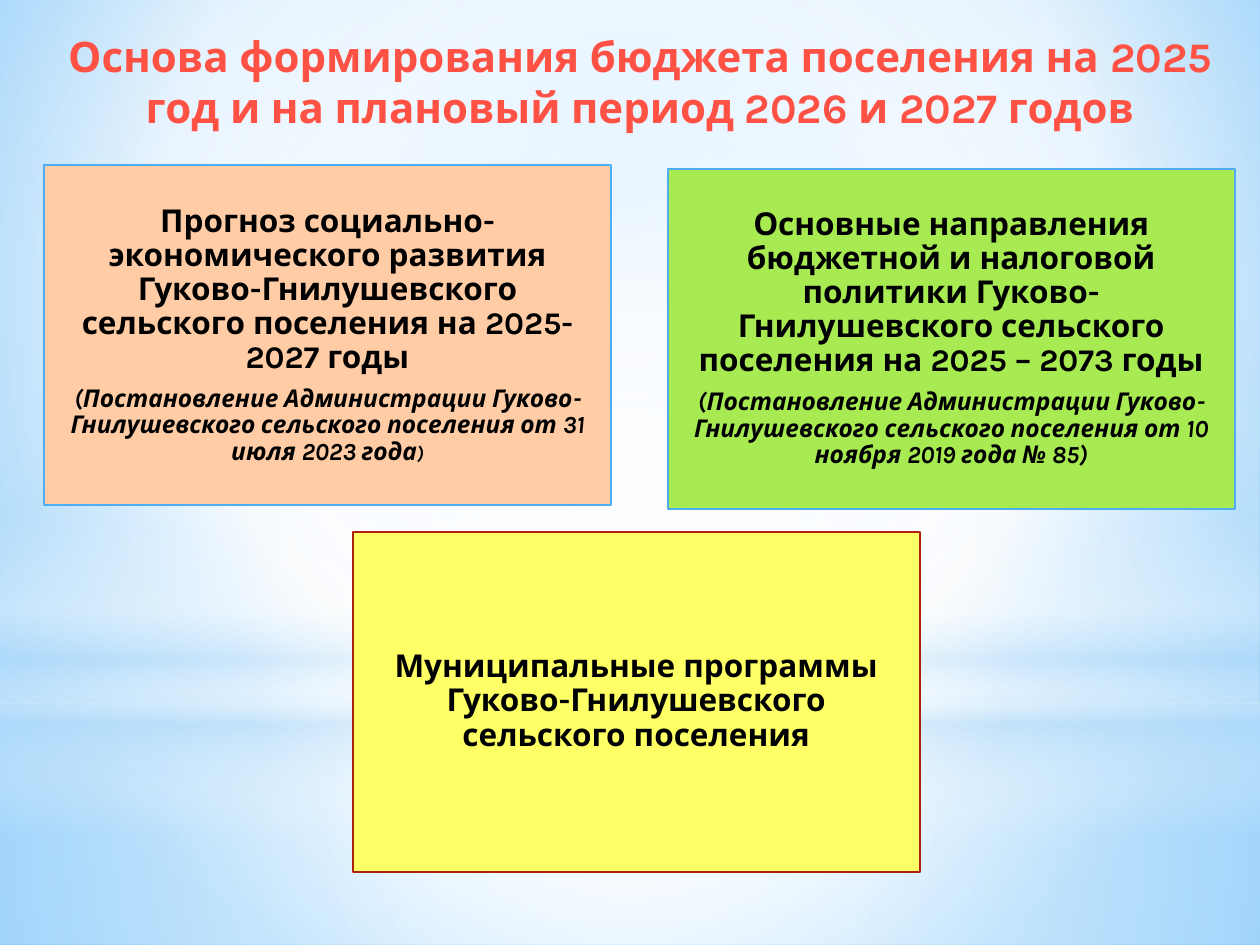
from pptx import Presentation
from pptx.dml.color import RGBColor
from pptx.enum.shapes import MSO_SHAPE
from pptx.enum.text import MSO_ANCHOR, PP_ALIGN
from pptx.oxml import parse_xml
from pptx.oxml.ns import nsdecls, qn
from pptx.util import Inches, Pt

RECT, OVAL = MSO_SHAPE.RECTANGLE, MSO_SHAPE.OVAL
MIDDLE, CENTER = MSO_ANCHOR.MIDDLE, PP_ALIGN.CENTER
FONT = "Karla"
WIDE, HIGH = 10, 7.5
BOX_W, BOX_H = 4.5, 2.7

WHITE = RGBColor(0xFF, 0xFF, 0xFF)
SKY = RGBColor(0x9E, 0xD5, 0xFF)
BLUE = RGBColor(0x5B, 0xB9, 0xFF)
PALE = RGBColor(0xB4, 0xDC, 0xFA)
BLACK = RGBColor(0, 0, 0)
MAROON = RGBColor(0x8A, 0x13, 0x00)
RED = RGBColor(0xFF, 0x52, 0x44)
BLUSH = RGBColor(0xFF, 0xF0, 0xF0)
PEACH = RGBColor(0xFF, 0xCC, 0xA6)
GREEN = RGBColor(0xA7, 0xEA, 0x52)
YELLOW = RGBColor(0xFF, 0xFF, 0x66)
EDGE = RGBColor(0x4F, 0xAD, 0xF3)
BRICK = RGBColor(0xB0, 0x1F, 0x07)

TITLE = "Основа формирования бюджета поселения на 2025 год и на плановый период 2026 и 2027 годов"

# Each box: left, top, fill, line, paragraphs of (text, size, italic) runs
BOXES = [
    (0.35, 1.31, PEACH, EDGE, [
        [("Прогноз социально-экономического развития Гуково-Гнилушевского "
          "сельского поселения на 2025-2027 годы", 18, False)],
        [("(Постановление Администрации Гуково-Гнилушевского сельского "
          "поселения от 31 июля 2023 года", 14, True), (")", 11, True)]]),
    (5.3, 1.34, GREEN, EDGE, [
        [("Основные направления бюджетной и налоговой политики "
          "Гуково-Гнилушевского сельского поселения на 2025 – 2073 годы", 18, False)],
        [("(Постановление Администрации Гуково-Гнилушевского сельского "
          "поселения от 10 ноября 2019 года № 85)", 14, True)]]),
    ((WIDE - BOX_W) / 2 + 0.05, 4.22, YELLOW, BRICK, [
        [("Муниципальные программы Гуково-Гнилушевского сельского поселения", 18, False)]]),
]

# Gradient stops: position %, colour, opacity %; focus: left, top, right, bottom %
MID = (50, 50, 50, 50)
BACK = [(0, SKY, 100), (60, WHITE, 100), (100, BLUE, 100)]
INK = [(0, MAROON, 100), (78, RED, 100), (100, BLUSH, 100)]
GLOWS = [
    (RECT, 5.58, 1.92, [(0, WHITE, 91), (37, WHITE, 76), (100, PALE, 79)], MID),
    (RECT, 0, 5.58, [(0, WHITE, 89), (48, WHITE, 62), (100, PALE, 79)], MID),
    (RECT, 4.12, 2.5, [(0, WHITE, 0), (29, WHITE, 30), (45, PALE, 40),
                       (55, WHITE, 26), (65, PALE, 60), (100, WHITE, 0)], None),
    (OVAL, 1.75, 5.58, [(0, WHITE, 100), (56, WHITE, 0)], MID),
]


def shade(owner, stops, focus=None):
    """Swap the solid fill inside owner for a gradient: round, or top to bottom."""
    marks = "".join(
        f'<a:gs pos="{pos * 1000}"><a:srgbClr val="{tint}">'
        f'<a:alpha val="{alpha * 1000}"/></a:srgbClr></a:gs>'
        for pos, tint, alpha in stops)
    if focus:
        sides = " ".join(f'{side}="{val * 1000}"' for side, val in zip("ltrb", focus))
        way = f'<a:path path="circle"><a:fillToRect {sides}/></a:path>'
    else:
        way = '<a:lin ang="5400000" scaled="0"/>'
    grad = parse_xml(f'<a:gradFill {nsdecls("a")} rotWithShape="1">'
                     f'<a:gsLst>{marks}</a:gsLst>{way}</a:gradFill>')
    owner.replace(owner.find(qn("a:solidFill")), grad)


def add_shape(slide, kind, *place):
    shape = slide.shapes.add_shape(kind, *map(Inches, place))
    shape.shadow.inherit = False
    shape.fill.solid()
    return shape


def add_back(slide):
    slide.background.fill.solid()
    shade(slide.element.find(".//" + qn("p:bgPr")), BACK, (20, 10, 20, 60))
    for kind, top, high, stops, focus in GLOWS:
        glow = add_shape(slide, kind, 0, top, WIDE, high)
        glow.line.fill.background()
        shade(glow.element.spPr, stops, focus)


def add_title(slide):
    frame = slide.shapes.add_textbox(*map(Inches, (0.33, 0.21, 9.5, 0.87))).text_frame
    frame.word_wrap = True
    frame.vertical_anchor = MIDDLE
    para = frame.paragraphs[0]
    para.alignment = CENTER
    run = para.add_run()
    run.text = TITLE
    font = run.font
    font.name, font.size, font.bold = FONT, Pt(24), True
    font.fill.solid()
    shade(run._r.rPr, INK)


def add_box(slide, left, top, fill, line, paras):
    box = add_shape(slide, RECT, left, top, BOX_W, BOX_H)
    box.fill.fore_color.rgb = fill
    box.line.color.rgb = line
    box.line.width = Pt(1.25)
    frame = box.text_frame
    frame.word_wrap = True
    frame.vertical_anchor = MIDDLE
    frame.margin_left = frame.margin_right = Inches(0.07)
    frame.margin_top = frame.margin_bottom = Inches(0.07)
    for i, runs in enumerate(paras):
        para = frame.add_paragraph() if i else frame.paragraphs[0]
        para.alignment = CENTER
        para.line_spacing = 0.9
        para.space_after = Pt(round(0.35 * runs[0][1], 1))
        para.font.name, para.font.bold = FONT, True
        para.font.color.rgb = BLACK
        for text, size, slant in runs:
            run = para.add_run()
            run.text = text
            run.font.size, run.font.italic = Pt(size), slant


def main():
    deck = Presentation()
    deck.slide_width, deck.slide_height = Inches(WIDE), Inches(HIGH)
    slide = deck.slides.add_slide(deck.slide_layouts[6])
    add_back(slide)
    add_title(slide)
    for box in BOXES:
        add_box(slide, *box)
    deck.save("out.pptx")


if __name__ == "__main__":
    main()
